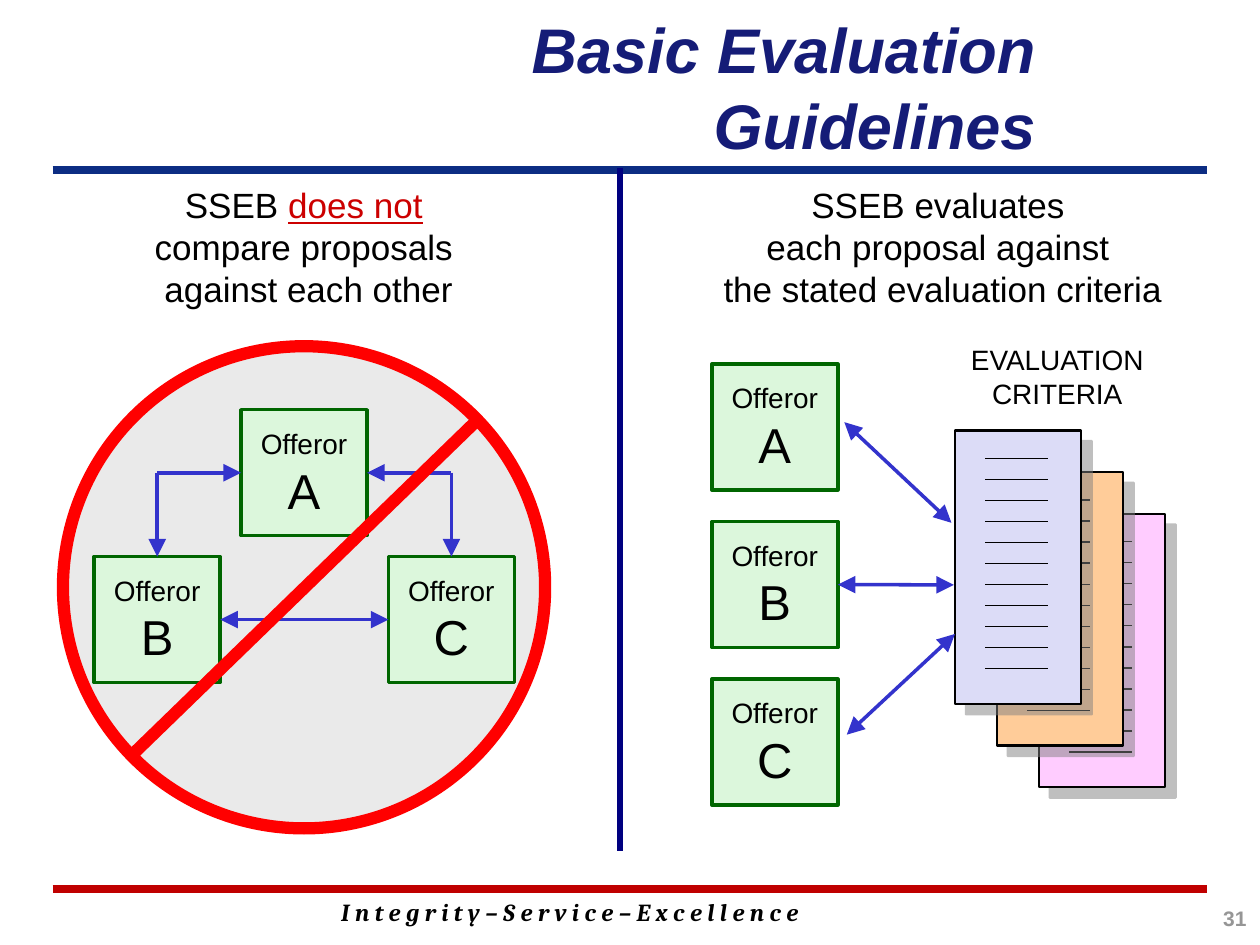
from dataclasses import dataclass

import pptx
import pptx.dml.color
import pptx.enum.shapes
import pptx.enum.text
import pptx.oxml
import pptx.oxml.ns
import pptx.util
from lxml import etree

Cm, Pt = pptx.util.Cm, pptx.util.Pt
Shape = pptx.enum.shapes.MSO_SHAPE
Align = pptx.enum.text.PP_ALIGN
Anchor = pptx.enum.text.MSO_ANCHOR
qn = pptx.oxml.ns.qn

COLORS = {
    "title": "151C77", "top_rule": "0C2D83", "foot_rule": "C00000",
    "divider": "000080", "ban": "FF0000", "disc": "EAEAEA",
    "offer": "DCF7DC", "offer_edge": "006600", "arrow": "3333CC",
    "pink": "FFCCFF", "orange": "FFCC99", "lilac": "DCDCF7",
    "black": "000000", "not": "CC0000", "number": "969696", "shadow": "808080",
}
FORMATS = {
    "title": {"name": "Arial", "size": Pt(36), "bold": True, "italic": True},
    "heading": {"name": "Arial", "size": Pt(20)},
    "not": {"name": "Arial", "size": Pt(20), "underline": True},
    "label": {"name": "Arial", "size": Pt(16)},
    "letter": {"name": "Arial", "size": Pt(28)},
    "motto": {"name": "Cambria", "size": Pt(14), "bold": True, "italic": True},
    "number": {"name": "Arial", "size": Pt(12), "bold": True},
}
BOX = 2.54  # side of an offeror box, cm
PAGE_W, PAGE_H = 2.54, 5.51
RULES, RULE_W, RULE_STEP = 11, 1.27, 0.424


@dataclass
class Run:
    text: str
    fmt: str
    color: str = "black"


@dataclass
class TextBox:
    x: float
    y: float
    w: float
    h: float
    runs: list[Run]
    align: int = Align.CENTER
    anchor: int = Anchor.TOP


@dataclass
class Offeror:
    letter: str
    x: float
    y: float


@dataclass
class Page:
    x: float
    y: float
    color: str


def rgb(key: str) -> pptx.dml.color.RGBColor:
    return pptx.dml.color.RGBColor.from_string(COLORS[key])


def add_runs(p, runs: list[Run]) -> None:
    """Write runs into a paragraph; a newline becomes a line break."""
    for run in runs:
        for i, line in enumerate(run.text.split("\n")):
            if i:
                p.add_line_break()
            if line:
                r = p.add_run()
                r.text = line
                for name, value in FORMATS[run.fmt].items():
                    setattr(r.font, name, value)
                r.font.color.rgb = rgb(run.color)


def add_text(s, box: TextBox) -> None:
    sp = s.shapes.add_textbox(Cm(box.x), Cm(box.y), Cm(box.w), Cm(box.h))
    tf = sp.text_frame
    tf.word_wrap = True
    tf.vertical_anchor = box.anchor
    p = tf.paragraphs[0]
    p.alignment = box.align
    add_runs(p, box.runs)


def add_shape(s, kind: int, x: float, y: float, w: float, h: float,
              fill: str, edge: str, weight: float):
    sp = s.shapes.add_shape(kind, Cm(x), Cm(y), Cm(w), Cm(h))
    sp.shadow.inherit = False
    sp.fill.solid()
    sp.fill.fore_color.rgb = rgb(fill)
    sp.line.color.rgb = rgb(edge)
    sp.line.width = Pt(weight)
    return sp


def add_line(s, start: tuple[float, float], end: tuple[float, float],
             color: str, weight: float, arrows: tuple[str, ...] = ()):
    ends = [Cm(v) for v in (*start, *end)]
    sp = s.shapes.add_connector(pptx.enum.shapes.MSO_CONNECTOR.STRAIGHT, *ends)
    sp.line.color.rgb = rgb(color)
    sp.line.width = Pt(weight)
    spPr = sp._element.spPr
    for tag in arrows:
        etree.SubElement(spPr.find(qn("a:ln")), qn(f"a:{tag}"),
                         type="triangle", w="lg", len="lg")
    etree.SubElement(spPr, qn("a:effectLst"))
    return sp


def add_offeror(s, offeror: Offeror):
    sp = add_shape(s, Shape.RECTANGLE, offeror.x, offeror.y, BOX, BOX,
                   "offer", "offer_edge", 2)
    tf = sp.text_frame
    tf.word_wrap = True
    tf.vertical_anchor = Anchor.MIDDLE
    for side in ("left", "top", "right", "bottom"):
        setattr(tf, f"margin_{side}", Cm(0.13))
    p = tf.paragraphs[0]
    p.alignment = Align.CENTER
    add_runs(p, [Run("Offeror\n", "label"), Run(offeror.letter, "letter")])
    return sp


def add_page(s, page: Page) -> None:
    sp = add_shape(s, Shape.RECTANGLE, page.x, page.y, PAGE_W, PAGE_H,
                   page.color, "black", 1.25)
    effects = sp._element.spPr.find(qn("a:effectLst"))
    shadow = etree.SubElement(effects, qn("a:outerShdw"), blurRad="0",
                              dist=str(Pt(8.5)), dir="2700000",
                              algn="ctr", rotWithShape="0")
    tint = etree.SubElement(shadow, qn("a:srgbClr"), val=COLORS["shadow"])
    etree.SubElement(tint, qn("a:alpha"), val="50000")
    x = page.x + 0.6
    for i in range(RULES):
        y = page.y + 0.56 + i * RULE_STEP
        add_line(s, (x, y), (x + RULE_W, y), "black", 0.75)


def draw_banned_comparison(s) -> None:
    add_shape(s, Shape.OVAL, 1.27, 6.98, 9.72, 9.72, "disc", "ban", 7)
    a, b, c = [add_offeror(s, o) for o in (
        Offeror("A", 4.86, 8.26), Offeror("B", 1.9, 11.22),
        Offeror("C", 7.83, 11.22))]
    # Elbows from A to B and C, each made of two arrows leaving one corner
    for corner, box, side in (((9.1, 9.53), c, 3), ((3.17, 9.53), b, 1)):
        for target, site in ((box, 0), (a, side)):
            sp = add_line(s, corner, corner, "arrow", 2, ("tailEnd",))
            sp.end_connect(target, site)
    sp = add_line(s, (4.44, 12.49), (7.83, 12.49), "arrow", 2,
                  ("headEnd", "tailEnd"))
    sp.begin_connect(b, 3)
    sp.end_connect(c, 1)
    add_line(s, (9.63, 8.46), (2.64, 15.24), "ban", 7)


def draw_criteria_evaluation(s) -> None:
    boxes = [add_offeror(s, Offeror(letter, 14.35, 7.34 + i * 3.175))
             for i, letter in enumerate("ABC")]
    for i, color in enumerate(("pink", "orange", "lilac")):
        add_page(s, Page(20.95 - i * 0.845, 10.36 - i * 0.84, color))
    both = ("headEnd", "tailEnd")
    add_line(s, (17.02, 8.51), (19.18, 10.54), "arrow", 2, both)
    sp = add_line(s, (16.89, 11.79), (19.23, 11.79), "arrow", 2, both)
    sp.begin_connect(boxes[1], 3)
    add_line(s, (17.07, 14.81), (19.25, 12.78), "arrow", 2, both)
    add_text(s, TextBox(19.23, 6.78, 4.17, 1.63,
                        [Run("EVALUATION\nCRITERIA", "label")]))


def main() -> None:
    prs = pptx.Presentation()
    prs.slide_width, prs.slide_height = Cm(25.4), Cm(19.05)
    s = prs.slides.add_slide(prs.slide_layouts[6])

    # Frame rules and title
    for y, color in ((17.93, "foot_rule"), (3.43, "top_rule")):
        add_line(s, (1.06, y), (24.34, y), color, 4.5)
    add_text(s, TextBox(4.62, 0.2, 16.51, 3.07,
                        [Run("Basic Evaluation Guidelines", "title", "title")],
                        Align.RIGHT, Anchor.MIDDLE))

    # Diagrams
    draw_banned_comparison(s)
    draw_criteria_evaluation(s)

    # Headings, divider and footer
    add_text(s, TextBox(1.3, 3.58, 9.65, 2.74, [
        Run("SSEB ", "heading"), Run("does not", "not", "not"),
        Run("\ncompare proposals\n against each other", "heading")]))
    add_text(s, TextBox(13.69, 3.58, 10.44, 2.74, [
        Run("SSEB evaluates\neach proposal against\n"
            " the stated evaluation criteria", "heading")]))
    add_line(s, (12.5, 3.38), (12.5, 17.15), "divider", 3)
    add_text(s, TextBox(22.2, 18.14, 3.18, 0.84,
                        [Run("31", "number", "number")], Align.RIGHT))
    add_text(s, TextBox(6.63, 17.96, 16.31, 0.86, [
        Run("I n t e g r i t y – S e r v i c e – E x c e l l e n c e",
            "motto")], Align.LEFT))
    prs.save("out.pptx")


if __name__ == "__main__":
    main()
